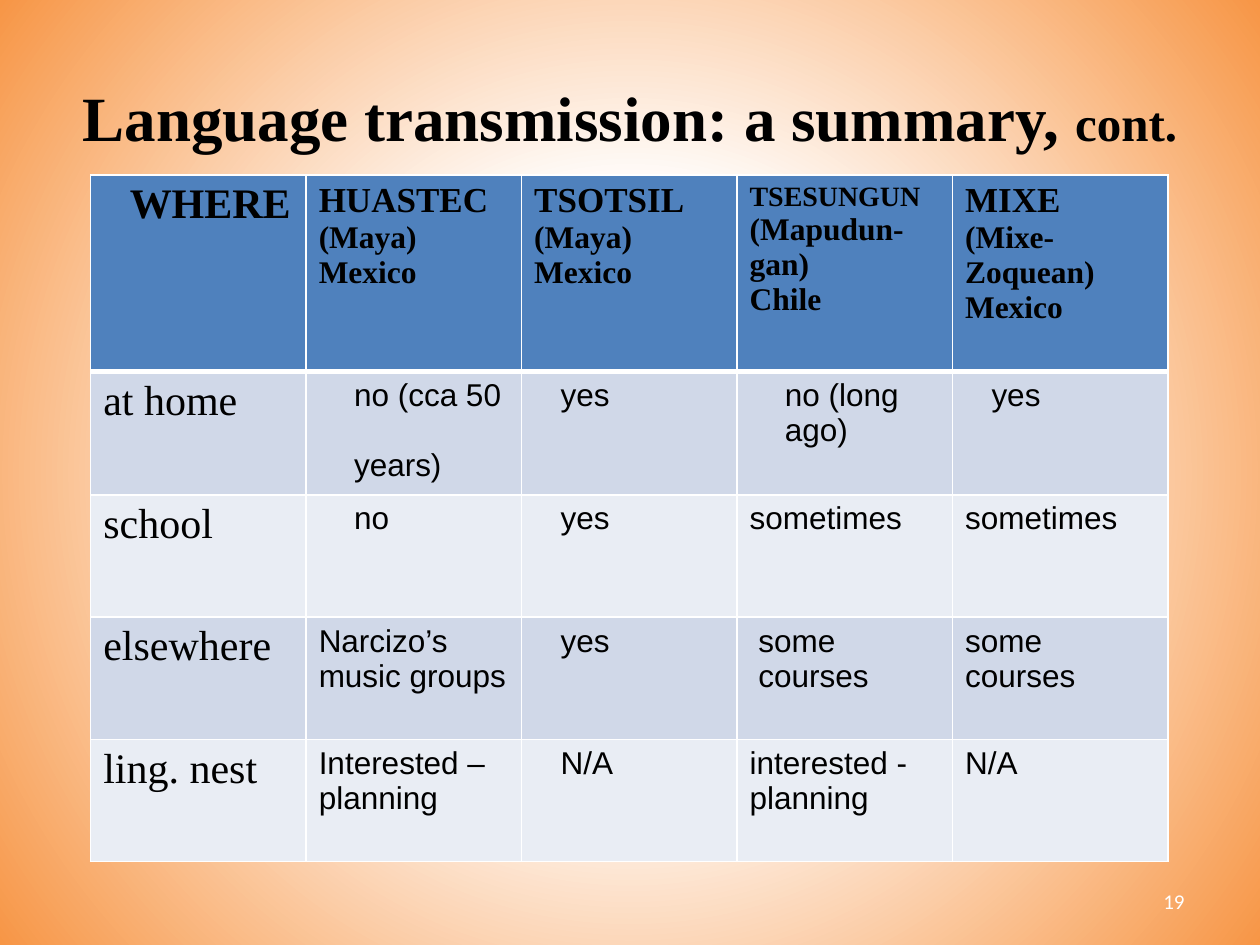
from pptx import Presentation
from pptx.dml.color import RGBColor
from pptx.enum.text import MSO_ANCHOR, PP_ALIGN
from pptx.oxml import parse_xml
from pptx.oxml.ns import nsdecls
from pptx.util import Emu, Inches, Pt

MIDDLE = MSO_ANCHOR.MIDDLE
CENTER, RIGHT = PP_ALIGN.CENTER, PP_ALIGN.RIGHT

COLORS = {
    "text": "000000",
    "white": "FFFFFF",
    "glow": "F79646",
    "header": "4F81BD",
    "odd": "D0D8E8",
    "even": "E9EDF4",
}
SERIF, SANS, NUMBER_FONT = "Times New Roman", "Arial", "Calibri"
SLIDE_W, SLIDE_H = Inches(10), Inches(7.5)
COLUMN_W = Inches(1.71)
HEADER_H, ROW_H = Inches(1.56), Inches(0.97)
DEEP, MEDIUM, SLIGHT = 0.28, 0.21, 0.07  # indents in inches
HEADER_LINE, BODY_LINE = 3, 1  # border widths in points

LANGUAGES = [
    (20, ["HUASTEC", "(Maya)", "Mexico"]),
    (20, ["TSOTSIL", "(Maya)", "Mexico"]),
    (16, ["TSESUNGUN", "(Mapudun-gan)", "Chile"]),
    (20, ["MIXE", "(Mixe-Zoquean)", "Mexico"]),
]
# Each place is followed by (indent, lines) for every language.
PLACES = [
    ("at home", [(DEEP, ["no (cca 50", "years)"]), (MEDIUM, ["yes"]),
                 (DEEP, ["no (long", "ago)"]), (MEDIUM, ["yes"])]),
    ("school", [(DEEP, ["no"]), (MEDIUM, ["yes"]),
                (0, ["sometimes"]), (0, ["sometimes"])]),
    ("elsewhere", [(0, ["Narcizo’s music groups"]), (MEDIUM, ["yes"]),
                   (SLIGHT, ["some", "courses"]), (0, ["some courses"])]),
    ("ling. nest", [(0, ["Interested – planning"]), (MEDIUM, ["N/A"]),
                    (0, ["interested - planning"]), (0, ["N/A"])]),
]


def set_font(font, size, name, color="text", bold=False):
    font.size, font.name, font.bold = Pt(size), name, bold
    font.color.rgb = RGBColor.from_string(COLORS[color])


def paint_background(slide):
    """Radial glow: white in the middle, orange towards the corners."""
    stops = "".join(
        f'<a:gs pos="{share * 1000}"><a:srgbClr val="{COLORS[color]}"/></a:gs>'
        for share, color in [(0, "white"), (35, "white"), (100, "glow")])
    slide.element.cSld.insert(0, parse_xml(
        f'<p:bg {nsdecls("p", "a")}><p:bgPr><a:gradFill rotWithShape="1">'
        f'<a:gsLst>{stops}</a:gsLst><a:path path="circle">'
        '<a:fillToRect l="50000" t="50000" r="50000" b="50000"/></a:path>'
        '</a:gradFill><a:effectLst/></p:bgPr></p:bg>'))


def add_line_of_text(slide, left, top, width, height, align):
    """Add a text box placed by shares of the slide; return its paragraph."""
    box = slide.shapes.add_textbox(
        Emu(int(left * SLIDE_W)), Emu(int(top * SLIDE_H)),
        Emu(int(width * SLIDE_W)), Emu(int(height * SLIDE_H)))
    frame = box.text_frame
    frame.word_wrap, frame.vertical_anchor = True, MIDDLE
    paragraph = frame.paragraphs[0]
    paragraph.alignment = align
    return paragraph


def add_title(slide):
    title = add_line_of_text(slide, 0.05, 0.04, 0.9, 0.167, CENTER)
    for words, size in [("Language transmission: a summary, ", 36), ("cont.", 28)]:
        run = title.add_run()
        run.text = words
        set_font(run.font, size, SERIF, bold=True)


def add_page_number(slide):
    number = add_line_of_text(slide, 0.717, 0.927, 0.233, 0.053, RIGHT)
    number.text = "19"
    set_font(number.font, 12, NUMBER_FONT, "white")


def style_cell(cell, fill, top_line, bottom_line):
    properties = cell._tc.get_or_add_tcPr()
    lines = [("L", BODY_LINE), ("R", BODY_LINE), ("T", top_line), ("B", bottom_line)]
    for side, width in lines:
        properties.append(parse_xml(
            f'<a:ln{side} {nsdecls("a")} w="{Pt(width)}"><a:solidFill>'
            f'<a:srgbClr val="{COLORS["white"]}"/></a:solidFill></a:ln{side}>'))
    cell.fill.solid()
    cell.fill.fore_color.rgb = RGBColor.from_string(COLORS[fill])


def write_cell(cell, lines, sizes, font, bold=False, indent=0):
    cell.text = "\n".join(lines)
    for paragraph, size in zip(cell.text_frame.paragraphs, sizes):
        set_font(paragraph.font, size, font, bold=bold)
        if indent:
            properties = paragraph._p.get_or_add_pPr()
            properties.set("marL", str(Inches(indent)))
            properties.set("indent", "0")


def add_summary_table(slide):
    rows, columns = len(PLACES) + 1, len(LANGUAGES) + 1
    table = slide.shapes.add_table(
        rows, columns, Inches(0.72), Inches(1.39),
        COLUMN_W * columns, HEADER_H + ROW_H * len(PLACES)).table
    for column in table.columns:
        column.width = COLUMN_W
    for index, row in enumerate(table.rows):
        row.height = ROW_H if index else HEADER_H
        fill = ("even", "odd")[index % 2] if index else "header"
        for cell in row.cells:
            style_cell(cell, fill, HEADER_LINE if index == 1 else BODY_LINE,
                       BODY_LINE if index else HEADER_LINE)

    write_cell(table.cell(0, 0), ["WHERE"], [24], SERIF, True, MEDIUM)
    for column, (name_size, lines) in enumerate(LANGUAGES, 1):
        write_cell(table.cell(0, column), lines, [name_size, 18, 18], SERIF, True)
    for row, (place, answers) in enumerate(PLACES, 1):
        write_cell(table.cell(row, 0), [place], [24], SERIF)
        for column, (indent, lines) in enumerate(answers, 1):
            write_cell(table.cell(row, column), lines, [18] * len(lines), SANS,
                       indent=indent)
    huastec_at_home = table.cell(1, 1).text_frame
    huastec_at_home.paragraphs[1].space_before = Pt(20)


def main():
    deck = Presentation()
    deck.slide_width, deck.slide_height = SLIDE_W, SLIDE_H
    slide = deck.slides.add_slide(deck.slide_layouts[6])
    paint_background(slide)
    add_title(slide)
    add_page_number(slide)
    add_summary_table(slide)
    deck.save("out.pptx")


if __name__ == "__main__":
    main()
